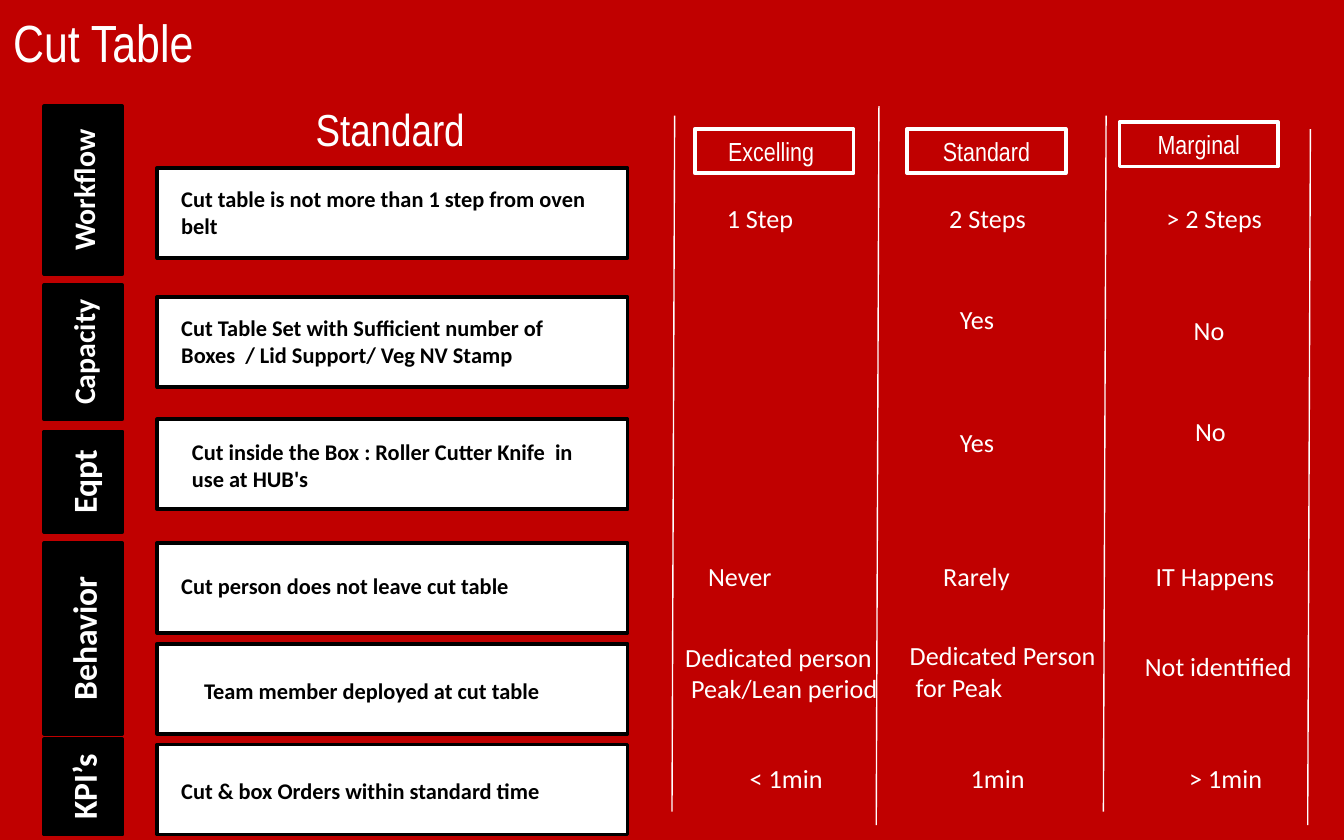
from lxml import etree
from pptx import Presentation
from pptx.dml.color import RGBColor
from pptx.enum.shapes import MSO_CONNECTOR, MSO_SHAPE
from pptx.enum.text import MSO_ANCHOR, MSO_AUTO_SIZE, PP_ALIGN
from pptx.oxml.ns import qn
from pptx.util import Inches, Pt

RED = RGBColor(0xC0, 0x00, 0x00)
WHITE = RGBColor(0xFF, 0xFF, 0xFF)
BLACK = RGBColor(0x00, 0x00, 0x00)
RECT = MSO_SHAPE.RECTANGLE
LINE = MSO_CONNECTOR.STRAIGHT
MIDDLE, CENTER = MSO_ANCHOR.MIDDLE, PP_ALIGN.CENTER
GROW, FIXED = MSO_AUTO_SIZE.SHAPE_TO_FIT_TEXT, MSO_AUTO_SIZE.NONE

TITLE = {"name": "Arial Narrow", "size": Pt(28), "color": WHITE}
HEAD = {**TITLE, "size": Pt(24)}
RATING = {**TITLE, "size": Pt(14)}
CELL = {"name": "Calibri", "size": Pt(14), "color": WHITE}
RULE = {"name": "Calibri", "size": Pt(12), "color": BLACK, "bold": True}
AREA = {**RULE, "color": WHITE}

# Work areas: name, top, length, text size
AREAS = [
    ("Workflow", 0.79, 1.25, 16),
    ("Capacity", 2.12, 1.0, 16),
    ("Eqpt", 3.21, 0.75, 18),
    ("Behavior", 4.04, 1.42, 18),
    ("KPI’s", 5.5, 0.71, 18),
]
AREA_MID, AREA_WIDE = 0.62, 0.58

# Rules: text, box top, then left, top, width and height of the text
RULES = [
    ("Cut table is not more than 1 step from oven belt", 1.25, (1.25, 1.33, 3.25, 0.5)),
    ("Cut Table Set with Sufficient number of Boxes  / Lid Support/ Veg NV Stamp",
     2.21, (1.25, 2.29, 3.25, 0.5)),
    ("Cut inside the Box : Roller Cutter Knife  in use at HUB's", 3.12, (1.33, 3.21, 3.25, 0.5)),
    ("Cut person does not leave cut table", 4.04, (1.25, 4.21, 3.42, 0.3)),
    ("Team member deployed at cut table", 4.79, (1.42, 4.99, 3.0, 0.3)),
    ("Cut & box Orders within standard time", 5.54, (1.25, 5.73, 3.25, 0.3)),
]
RULE_LEFT, RULE_WIDE, RULE_HIGH = 1.17, 3.5, 0.67

# Ratings: name, left and top of the box, then cells of text, left, top, width
RATINGS = [
    ("Excelling ", 5.17, 0.96, [
        ("1 Step", 5.31, 1.46, 0.74),
        ("Never", 5.17, 4.12, 0.68),
        ("Dedicated person\n Peak/Lean period", 5, 4.72, 1.65),
        ("< 1min", 5.48, 5.62, 0.79),
    ]),
    ("Standard", 6.75, 0.96, [
        (" 2 Steps", 6.92, 1.46, 0.82),
        (" Yes", 7, 2.21, 0.55),
        (" Yes", 7, 3.12, 0.55),
        ("Rarely", 6.92, 4.12, 0.7),
        ("Dedicated Person\n for Peak", 6.67, 4.71, 1.65),
        (" 1min", 7.08, 5.62, 0.65),
    ]),
    ("Marginal", 8.33, 0.91, [
        ("> 2 Steps", 8.58, 1.46, 0.92),
        (" No", 8.74, 2.29, 0.47),
        (" No", 8.75, 3.04, 0.47),
        ("IT Happens", 8.5, 4.12, 1.09),
        ("Not identified", 8.42, 4.79, 1.35),
        ("> 1min", 8.75, 5.62, 0.75),
    ]),
]
RATING_WIDE, RATING_HIGH = 1.18, 0.33

# Dividers: x at the top, top, bottom
DIVIDERS = [(5.02, 0.86, 6.04), (6.54, 0.79, 6.14), (8.23, 0.86, 6.04), (9.75, 0.96, 6.14)]
LEAN = 0.02


def write(frame, text, style, align=None):
    for i, line in enumerate(text.split("\n")):
        para = frame.paragraphs[0] if i == 0 else frame.add_paragraph()
        para.alignment = align
        run = para.add_run()
        run.text = line
        for key, value in style.items():
            if key == "color":
                run.font.color.rgb = value
            else:
                setattr(run.font, key, value)


def add_text(slide, text, place, style, **layout):
    frame = slide.shapes.add_textbox(*map(Inches, place)).text_frame
    for key, value in {"word_wrap": True, "auto_size": GROW, **layout}.items():
        setattr(frame, key, value)
    write(frame, text, style)


def add_box(slide, place, fill, edge, text="", style=None, turn=0):
    box = slide.shapes.add_shape(RECT, *map(Inches, place))
    box.shadow.inherit = False
    box.rotation = turn
    box.fill.solid()
    box.fill.fore_color.rgb = fill
    box.line.color.rgb = edge
    box.line.width = Pt(2)
    if text:
        box.text_frame.vertical_anchor = MIDDLE
        write(box.text_frame, text, style, CENTER)


def add_divider(slide, x, top, bottom):
    line = slide.shapes.add_connector(LINE, *map(Inches, (x, top, x - LEAN, bottom)))
    line.line.color.rgb = WHITE
    line.line.width = Pt(0.75)
    etree.SubElement(line.element.spPr, qn("a:effectLst"))


def main():
    deck = Presentation()
    deck.slide_width, deck.slide_height = Inches(10), Inches(6.25)
    slide = deck.slides.add_slide(deck.slide_layouts[6])
    slide.background.fill.solid()
    slide.background.fill.fore_color.rgb = RED

    add_text(slide, "Cut Table", (0, 0, 9, 0.62), TITLE,
             auto_size=FIXED, vertical_anchor=MIDDLE)
    add_text(slide, "Standard", (2.25, 0.71, 1.47, 0.48), HEAD, word_wrap=False)

    for name, top, length, size in AREAS:
        # Laid flat around the same centre, then turned to read upwards
        place = (AREA_MID - length / 2, top + (length - AREA_WIDE) / 2, length, AREA_WIDE)
        add_box(slide, place, BLACK, BLACK, name, {**AREA, "size": Pt(size)}, 270)

    for text, top, place in RULES:
        add_box(slide, (RULE_LEFT, top, RULE_WIDE, RULE_HIGH), WHITE, BLACK)
        add_text(slide, text, place, RULE)

    for divider in DIVIDERS:
        add_divider(slide, *divider)

    for name, left, top, cells in RATINGS:
        add_box(slide, (left, top, RATING_WIDE, RATING_HIGH), RED, WHITE, name, RATING)
        for text, x, y, wide in cells:
            high = 0.57 if "\n" in text else 0.34
            add_text(slide, text, (x, y, wide, high), CELL, word_wrap=False)

    deck.save("out.pptx")


if __name__ == "__main__":
    main()
